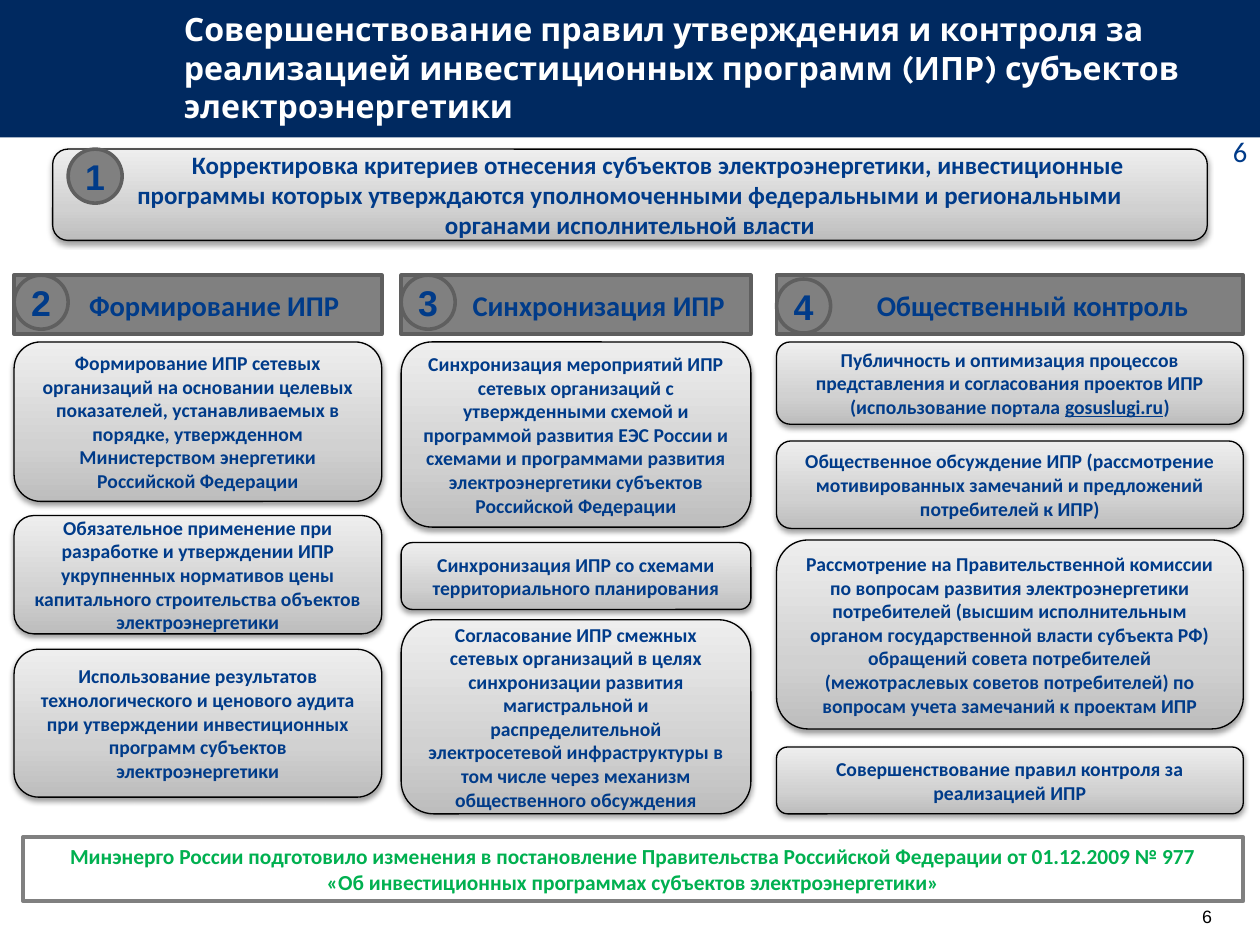
from copy import deepcopy

from lxml import etree
from pptx import Presentation, util as u
from pptx.dml.color import RGBColor
from pptx.enum import shapes, text
from pptx.oxml import ns

PX = 9144
NAVY = RGBColor(0x00, 0x29, 0x60)
BLUE = RGBColor(0x00, 0x3B, 0x89)
GREEN = RGBColor(0x00, 0xB0, 0x50)
WHITE = RGBColor(0xFF, 0xFF, 0xFF)
BLACK = RGBColor(0x00, 0x00, 0x00)
GRAY = RGBColor(0x80, 0x80, 0x80)
DARK_GRAY = RGBColor(0x5F, 0x5F, 0x5F)
CARD_STOPS = (
    (0, RGBColor(0xBD, 0xBD, 0xBD)),
    (0.35, RGBColor(0xD1, 0xD1, 0xD1)),
    (1, RGBColor(0xEE, 0xEE, 0xEE)),
)
SHAPE = shapes.MSO_SHAPE
CENTER, LEFT, RIGHT = text.PP_ALIGN.CENTER, text.PP_ALIGN.LEFT, text.PP_ALIGN.RIGHT
MIDDLE, TOP = text.MSO_ANCHOR.MIDDLE, text.MSO_ANCHOR.TOP

PORTAL = "gosuslugi.ru"
TITLE = (
    "Совершенствование правил утверждения и контроля за реализацией "
    "инвестиционных программ (ИПР) субъектов электроэнергетики"
)
CRITERIA = (
    "Корректировка критериев отнесения субъектов электроэнергетики, инвестиционные "
    "программы которых утверждаются уполномоченными федеральными и региональными",
    "органами исполнительной власти",
)
DECREE = (
    "Минэнерго России подготовило изменения в постановление Правительства "
    "Российской Федерации от 01.12.2009 № 977",
    "«Об инвестиционных программах субъектов электроэнергетики»",
)
COLUMNS = (
    (11, 286, "2", 214, "Формирование ИПР", 35, (
        (266, 124, "Формирование ИПР сетевых организаций на основании целевых показателей, "
                   "устанавливаемых в порядке, утвержденном Министерством энергетики "
                   "Российской Федерации"),
        (401, 92, "Обязательное применение при разработке и утверждении ИПР укрупненных "
                  "нормативов цены капитального строительства объектов электроэнергетики"),
        (505, 115, "Использование результатов технологического и ценового аудита при "
                   "утверждении инвестиционных программ субъектов электроэнергетики"),
    )),
    (312, 272, "3", 214, "Синхронизация ИПР", 45, (
        (266, 144, "Синхронизация мероприятий ИПР сетевых организаций с утвержденными схемой "
                   "и программой развития ЕЭС России и схемами и программами развития "
                   "электроэнергетики субъектов Российской Федерации"),
        (422, 52, "Синхронизация ИПР со схемами территориального планирования"),
        (482, 151, "Согласование ИПР смежных сетевых организаций в целях синхронизации "
                   "развития магистральной и распределительной электросетевой инфраструктуры "
                   "в том числе через механизм общественного обсуждения"),
    )),
    (604, 363, "4", 217, "Общественный контроль", 45, (
        (266, 64, "Публичность и оптимизация процессов представления и согласования проектов "
                  f"ИПР (использование портала {PORTAL})"),
        (343, 68, "Общественное обсуждение ИПР (рассмотрение мотивированных замечаний и "
                  "предложений потребителей к ИПР)"),
        (420, 147, "Рассмотрение на Правительственной комиссии по вопросам развития "
                   "электроэнергетики потребителей (высшим исполнительным органом "
                   "государственной власти субъекта РФ) обращений совета потребителей "
                   "(межотраслевых советов потребителей) по вопросам учета замечаний "
                   "к проектам ИПР"),
        (581, 52, "Совершенствование правил контроля за реализацией ИПР"),
    )),
)


def write(shape, lines, size, color=BLUE, name="Calibri", bold=True,
          align=CENTER, anchor=MIDDLE, insets=(10, 5, 10, 5), wrap=True):
    """Fill a shape with paragraphs in one style, underlining the portal address."""
    frame = shape.text_frame
    frame.word_wrap = wrap
    frame.vertical_anchor = anchor
    frame.margin_left, frame.margin_top, frame.margin_right, frame.margin_bottom = (
        inset * PX for inset in insets)
    for index, line in enumerate(lines):
        paragraph = frame.paragraphs[0] if index == 0 else frame.add_paragraph()
        for part in filter(None, line.partition(PORTAL)):
            run = paragraph.add_run()
            run.text = part
            if part == PORTAL:
                run.font.underline = True
        paragraph.alignment = align
        font = paragraph.font
        font.size, font.name, font.bold = u.Pt(size), name, bold
        font.color.rgb = color


def add_label(slide, box, line, size, **style):
    """Add a text box holding one paragraph."""
    label = slide.shapes.add_textbox(*(length * PX for length in box))
    write(label, [line], size, **style)


def add_block(slide, kind, box, fill=None, line=None, weight=2):
    """Add a preset shape without a shadow."""
    block = slide.shapes.add_shape(kind, *(length * PX for length in box))
    block.shadow.inherit = False
    if fill is not None:
        block.fill.solid()
        block.fill.fore_color.rgb = fill
    if line is None:
        block.line.fill.background()
    else:
        block.line.color.rgb = line
        block.line.width = u.Pt(weight)
    return block


def add_card(slide, box, lines, size=11):
    """Add a rounded card with a gray gradient and a soft shadow."""
    card = add_block(slide, SHAPE.ROUNDED_RECTANGLE, box, line=BLACK, weight=0.75)
    card.fill.gradient()
    card.fill.gradient_angle = 90
    stop_list = card._element.spPr.find(".//" + ns.qn("a:gsLst"))
    stop_list.append(deepcopy(stop_list[0]))
    for stop, (position, color) in zip(card.fill.gradient_stops, CARD_STOPS):
        stop.position = position
        stop.color.rgb = color
    effects = card._element.spPr.find(ns.qn("a:effectLst"))
    shadow = etree.SubElement(effects, ns.qn("a:outerShdw"), blurRad="40000",
                              dist="20000", dir="5400000", rotWithShape="0")
    shade = etree.SubElement(shadow, ns.qn("a:srgbClr"), val="000000")
    etree.SubElement(shade, ns.qn("a:alpha"), val="38000")
    write(card, lines, size)
    return card


def add_badge(slide, left, top, number):
    """Add a numbered circle."""
    badge = add_block(slide, SHAPE.OVAL, (left, top, 42, 42), GRAY, DARK_GRAY)
    write(badge, [number], 20, name="Arial", insets=(8, 1, 8, 1), wrap=False)


def add_column(slide, left, width, number, badge_top, heading, inset, cards):
    """Add a numbered heading and the cards below it."""
    header = add_block(slide, SHAPE.RECTANGLE, (left, 214, width, 46), GRAY, DARK_GRAY)
    write(header, [heading], 16, insets=(inset, 5, 10, 5))
    add_badge(slide, left, badge_top, number)
    for top, height, line in cards:
        add_card(slide, (left, top, width, height), [line])


def main():
    """Build the slide and save it."""
    presentation = Presentation()
    presentation.slide_width, presentation.slide_height = 980 * PX, 735 * PX
    slide = presentation.slides.add_slide(presentation.slide_layouts[6])

    add_block(slide, SHAPE.RECTANGLE, (0, 0, 980, 107), NAVY)
    add_label(slide, (143, 22, 813, 61), TITLE, 18, color=WHITE, name="Karla",
              align=LEFT, insets=(0, 0, 0, 0))
    add_label(slide, (905, 99, 75, 38), "6", 16, bold=False, align=RIGHT, anchor=TOP)
    add_label(slide, (935, 704, 23, 17), "6", 10, color=BLACK, name="Arial", bold=False,
              align=LEFT, insets=(0, 0, 0, 0), wrap=False)

    criteria = add_card(slide, (41, 116, 898, 71), CRITERIA, 14)
    first = criteria.text_frame.paragraphs[0]
    first._p.get_or_add_pPr().set("indent", str(44 * PX))
    add_badge(slide, 53, 116, "1")

    for column in COLUMNS:
        add_column(slide, *column)

    decree = add_block(slide, SHAPE.RECTANGLE, (18, 651, 949, 50), WHITE, GRAY)
    write(decree, DECREE, 12, color=GREEN, anchor=TOP)
    presentation.save("out.pptx")


if __name__ == "__main__":
    main()
